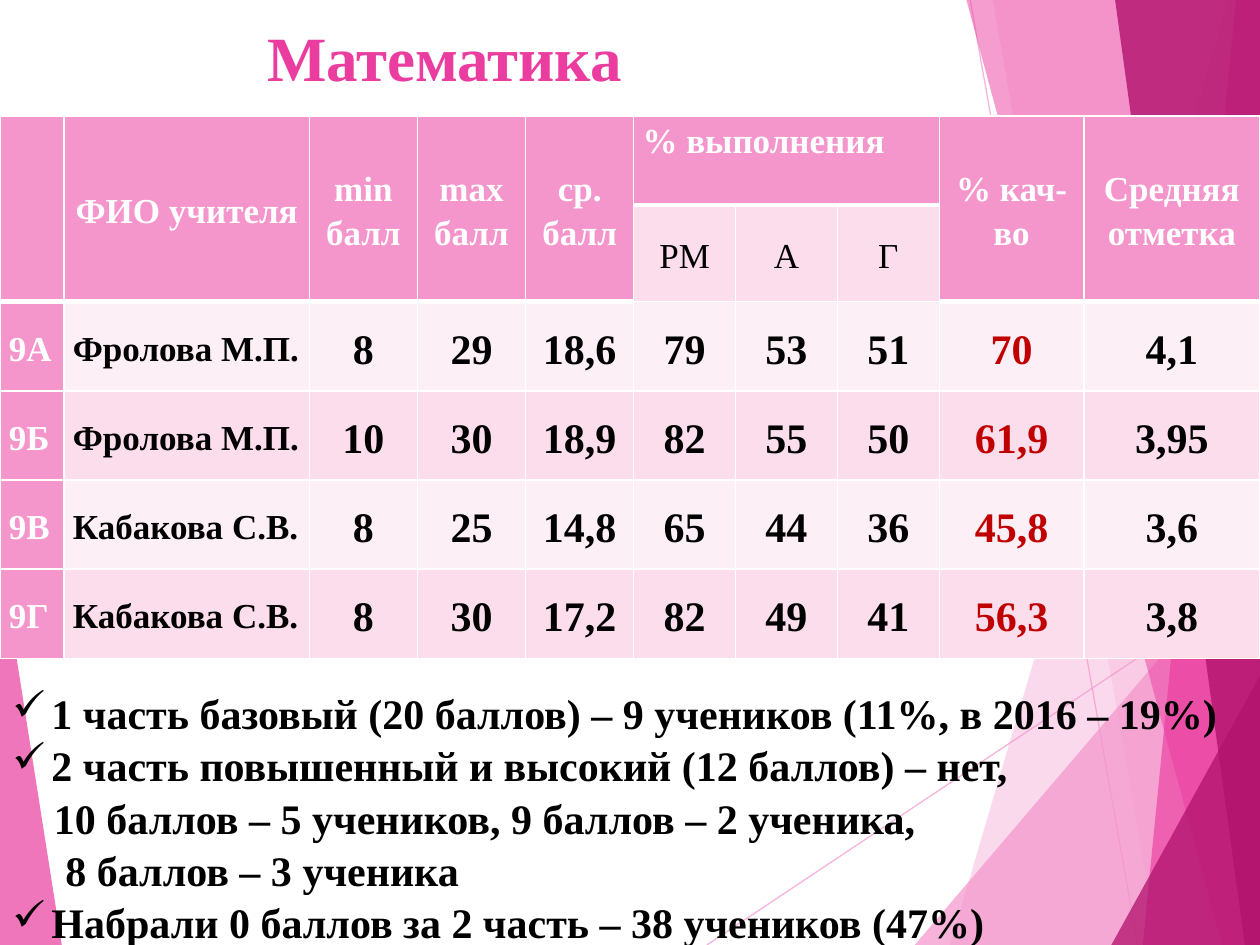
from lxml import etree
from pptx import Presentation
from pptx.dml.color import RGBColor
from pptx.enum.shapes import MSO_CONNECTOR
from pptx.enum.text import MSO_ANCHOR as ANCHOR, PP_ALIGN as ALIGN
from pptx.oxml import parse_xml
from pptx.oxml.ns import nsdecls, qn
from pptx.util import Inches, Pt

WIDTH, HEIGHT = Inches(10), Inches(7.5)
FONT = "Times New Roman"
LIGHT, PINK, DARK = "F496CB", "EB3D9F", "B2136D"
BAND, PALE, WHITE, BLACK, RED = "FBDDEC", "FDEFF6", "FFFFFF", "000000", "C00000"

# Points are percentages of the slide's width and height.
RAYS = [((56.1, 100), (100, 61)), ((77, 0), (90.3, 100))]
FACETS = [
    (LIGHT, 36, [(97.5, 0), (75.4, 100), (100, 100), (100, 0)]),
    (LIGHT, 20, [(78.8, 0), (91.9, 100), (100, 100), (100, 0)]),
    (LIGHT, 72, [(72.6, 100), (100, 57.2), (100, 100)]),
    (PINK, 50, [(76.7, 0), (97, 100), (100, 100), (100, 0)]),
    (PINK, 66, [(98.1, 0), (90.7, 100), (100, 100), (100, 0)]),
    (DARK, 80, [(88.5, 0), (98.8, 100), (100, 100), (100, 0)]),
    (DARK, 76, [(88.2, 100), (100, 71.5), (100, 100)]),
    (PINK, 70, [(0, 58.5), (4.9, 100), (0, 100)]),
]

COLUMNS = [0.51, 1.95, 0.86, 0.86, 0.86, 0.81, 0.81, 0.81, 1.15, 1.4]
HEADINGS = ["", "ФИО учителя", "min балл", "max балл", "ср. балл",
            "% выполнения", "", "", "% кач-во", "Средняя отметка"]
PARTS = {5: "РМ", 6: "А", 7: "Г"}
RESULTS = [
    ["9А", "Фролова М.П.", "8", "29", "18,6", "79", "53", "51", "70", "4,1"],
    ["9Б", "Фролова М.П.", "10", "30", "18,9", "82", "55", "50", "61,9", "3,95"],
    ["9В", "Кабакова С.В.", "8", "25", "14,8", "65", "44", "36", "45,8", "3,6"],
    ["9Г", "Кабакова С.В.", "8", "30", "17,2", "82", "49", "41", "56,3", "3,8"],
]
QUALITY = HEADINGS.index("% кач-во")

# Text, whether it has a check mark, and left indent in inches.
NOTES = [
    ("1 часть базовый (20 баллов) – 9 учеников (11%, в 2016 – 19%)", True, 0.31),
    ("2 часть повышенный и высокий (12 баллов) – нет,", True, 0.31),
    ("10 баллов – 5 учеников, 9 баллов – 2 ученика,", False, 0.33),
    ("8 баллов – 3 ученика", False, 0.42),
    ("Набрали 0 баллов за 2 часть – 38 учеников (47%)", True, 0.31),
]


def rgb(value):
    return RGBColor.from_string(value)


def share(left, top, width, height):
    """Box from percentages of the slide."""
    return (int(WIDTH * left / 100), int(HEIGHT * top / 100),
            int(WIDTH * width / 100), int(HEIGHT * height / 100))


def point(box, x, y):
    left, top, width, height = box
    return int(left + width * x / 100), int(top + height * y / 100)


def set_alpha(properties, percent):
    color = next(properties.iter(qn("a:srgbClr")))
    etree.SubElement(color, qn("a:alpha")).set("val", str(percent * 1000))


def write(p, text, size, color=BLACK, bold=True, **layout):
    for name, value in layout.items():
        setattr(p, name, value)
    r = p.add_run()
    r.text = text
    for name, value in dict(name=FONT, size=Pt(size), bold=bold).items():
        setattr(r.font, name, value)
    r.font.color.rgb = rgb(color)


def add_backdrop(slide, box):
    for start, end in RAYS:
        ray = slide.shapes.add_connector(
            MSO_CONNECTOR.STRAIGHT, *point(box, *start), *point(box, *end))
        ray.line.width = Pt(0.75)
        ray.line.color.rgb = rgb(LIGHT)
        properties = ray._element.spPr
        set_alpha(properties, 70)
        etree.SubElement(properties, qn("a:effectLst"))
    for color, opacity, corners in FACETS:
        first, *rest = [point(box, *corner) for corner in corners]
        builder = slide.shapes.build_freeform(*first)
        builder.add_line_segments(rest, close=True)
        sp = builder.convert_to_shape()
        sp.shadow.inherit = False
        sp.fill.solid()
        sp.fill.fore_color.rgb = rgb(color)
        set_alpha(sp._element.spPr, opacity)
        sp.line.fill.background()


def add_title(slide, box):
    tf = slide.shapes.add_textbox(*box).text_frame
    tf.word_wrap = True
    tf.vertical_anchor = ANCHOR.MIDDLE
    write(tf.paragraphs[0], "Математика ", 36, PINK,
          alignment=ALIGN.CENTER, line_spacing=0.9)


def set_borders(cell, top, bottom):
    properties = cell._tc.get_or_add_tcPr()
    sides = dict(lnL=1, lnR=1, lnT=top, lnB=bottom)
    for position, (side, width) in enumerate(sides.items()):
        properties.insert(position, parse_xml(
            f'<a:{side} {nsdecls("a")} w="{Pt(width)}"><a:solidFill>'
            f'<a:srgbClr val="{WHITE}"/></a:solidFill></a:{side}>'))


def cell_content(row, col):
    """Text, fill and text format of one cell."""
    if row == 0:
        align = ALIGN.JUSTIFY if col in PARTS else ALIGN.CENTER
        return HEADINGS[col], LIGHT, dict(size=20, color=WHITE, alignment=align)
    if row == 1:
        fill = BAND if col in PARTS else LIGHT
        return PARTS.get(col, ""), fill, dict(size=20, bold=False, alignment=ALIGN.CENTER)
    text = RESULTS[row - 2][col]
    fill = BAND if row % 2 else PALE
    if col == 0:
        return text, LIGHT, dict(size=20, color=WHITE, alignment=ALIGN.JUSTIFY)
    if col == 1:
        return text, fill, dict(size=20, alignment=ALIGN.JUSTIFY)
    color = RED if col == QUALITY else BLACK
    return text, fill, dict(size=24, color=color, alignment=ALIGN.CENTER)


def add_results(slide, box):
    rows = len(RESULTS) + 2
    table = slide.shapes.add_table(rows, len(COLUMNS), *box).table
    table.first_row = table.horz_banding = False
    for column, width in zip(table.columns, COLUMNS):
        column.width = int(box[2] * width / sum(COLUMNS))
    for line in table.rows:
        line.height = box[3] // rows
    for row in range(rows):
        for col in range(len(COLUMNS)):
            cell = table.cell(row, col)
            text, fill, style = cell_content(row, col)
            cell.margin_left = cell.margin_right = Inches(0.07)
            cell.margin_top = cell.margin_bottom = 0
            cell.vertical_anchor = (ANCHOR.TOP if row == 0 and col in PARTS
                                    else ANCHOR.MIDDLE)
            cell.fill.solid()
            cell.fill.fore_color.rgb = rgb(fill)
            header_end = 1 if col in PARTS else 2
            set_borders(cell, 3 if row == header_end else 1,
                        3 if row + 1 == header_end else 1)
            if text:
                write(cell.text_frame.paragraphs[0], text, **style,
                      line_spacing=1.15, space_after=Pt(10))
    for col in range(len(COLUMNS)):
        if col not in PARTS:
            table.cell(0, col).merge(table.cell(1, col))
    table.cell(0, min(PARTS)).merge(table.cell(0, max(PARTS)))


def add_notes(slide, box):
    tf = slide.shapes.add_textbox(*box).text_frame
    tf.word_wrap = True
    for i, (text, checked, indent) in enumerate(NOTES):
        p = tf.add_paragraph() if i else tf.paragraphs[0]
        write(p, text, 24, line_spacing=1.04)
        properties = p._p.get_or_add_pPr()
        properties.set("marL", str(Inches(indent)))
        if checked:
            properties.set("indent", str(-Inches(indent)))
            etree.SubElement(properties, qn("a:buChar")).set("char", "✓")


def main():
    prs = Presentation()
    prs.slide_width, prs.slide_height = WIDTH, HEIGHT
    slide = prs.slides.add_slide(prs.slide_layouts[6])
    add_backdrop(slide, share(0, 0, 100, 100))
    add_title(slide, share(1.2, 0.67, 69.4, 11.6))
    add_results(slide, share(0, 12.27, 100, 56.6))
    add_notes(slide, share(0, 71.87, 98.8, 28.13))
    prs.save("out.pptx")


if __name__ == "__main__":
    main()
